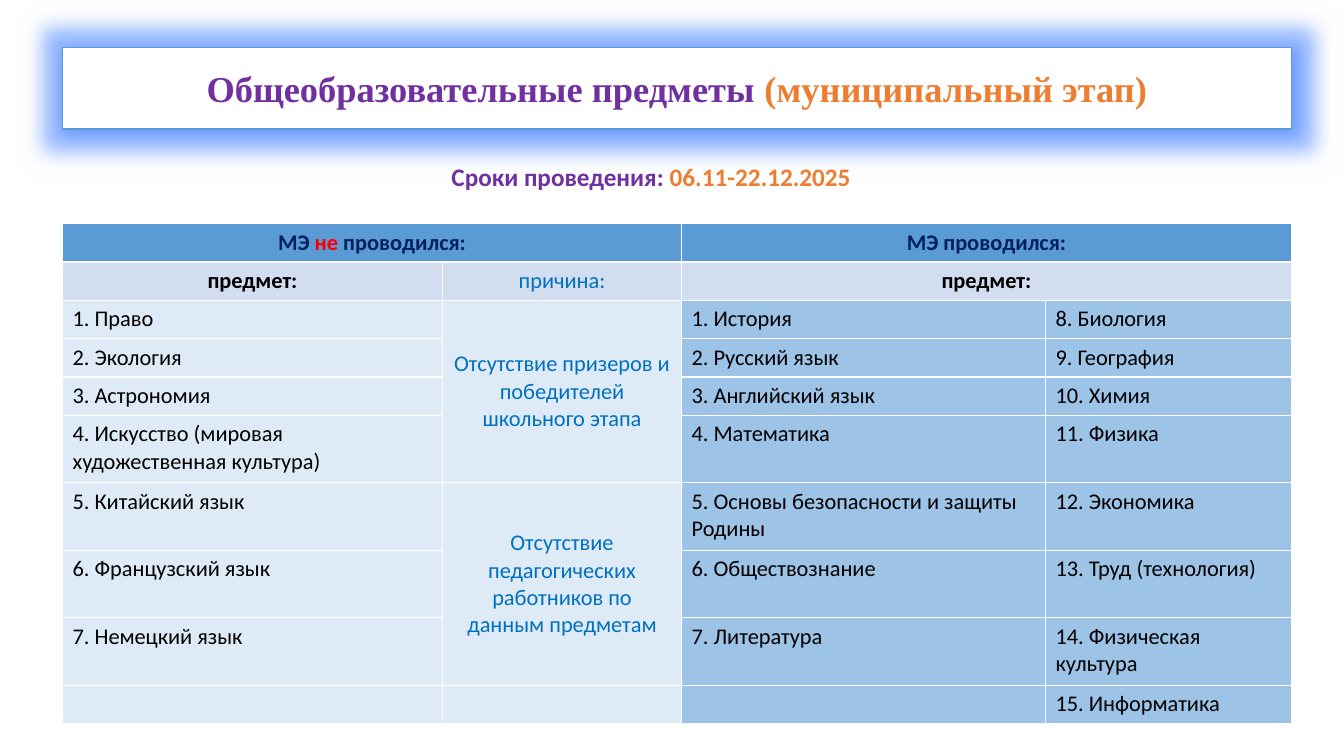
"""Builds the slide listing school subjects with and without a municipal stage."""
from dataclasses import dataclass

import pptx
import pptx.dml.color
import pptx.enum.text
import pptx.oxml
import pptx.oxml.ns
import pptx.util
from lxml import etree

Inches = pptx.util.Inches
Pt = pptx.util.Pt
CENTER = pptx.enum.text.PP_ALIGN.CENTER
LEFT = pptx.enum.text.PP_ALIGN.LEFT
MIDDLE = pptx.enum.text.MSO_ANCHOR.MIDDLE
TOP = pptx.enum.text.MSO_ANCHOR.TOP

BLACK, BLUE, NAVY, RED = "000000", "0070C0", "002060", "FF0000"
PURPLE, ORANGE, WHITE, ACCENT = "7030A0", "ED7D31", "FFFFFF", "5B9BD5"
BAND, PALE, SKY = "D2DEEF", "DEEBF7", "9DC3E6"

COLUMNS = [3.77, 2.37, 3.61, 2.44]
ROWS = [0.38] * 5 + [0.67] * 4 + [0.38]
NOT_HELD = [
    "1. Право", "2. Экология", "3. Астрономия",
    "4. Искусство (мировая художественная культура)",
    "5. Китайский язык", "6. Французский язык", "7. Немецкий язык", "",
]
HELD = [
    "1. История", "2. Русский язык", "3. Английский язык", "4. Математика",
    "5. Основы безопасности и защиты Родины", "6. Обществознание",
    "7. Литература", "",
]
HELD_MORE = [
    "8. Биология", "9. География", "10. Химия", "11. Физика", "12. Экономика",
    "13. Труд (технология)", "14. Физическая культура", "15. Информатика",
]
GLOW = (
    '<a:effectLst xmlns:a="http://schemas.openxmlformats.org/drawingml/2006/main">'
    '<a:glow rad="342900"><a:srgbClr val="6699FF"><a:alpha val="60000"/></a:srgbClr></a:glow>'
    '<a:outerShdw blurRad="127000" dist="25400" dir="2700000" algn="ctr">'
    '<a:srgbClr val="6699FF"/></a:outerShdw></a:effectLst>'
)


@dataclass
class Run:
    text: str
    color: str = BLACK
    bold: bool = False


@dataclass
class Cell:
    row: int
    col: int
    runs: list[Run]
    fill: str
    row_span: int = 1
    col_span: int = 1
    align: int = CENTER
    anchor: int = TOP


def rgb(value: str) -> pptx.dml.color.RGBColor:
    return pptx.dml.color.RGBColor.from_string(value)


def set_fill(item, color: str) -> None:
    item.fill.solid()
    item.fill.fore_color.rgb = rgb(color)


def write(tf, runs: list[Run], size: int, align: int, font: str = "Calibri") -> None:
    p = tf.paragraphs[0]
    p.alignment = align
    for run in runs:
        r = p.add_run()
        r.text = run.text
        style = {"name": font, "size": Pt(size), "bold": run.bold}
        for key, value in style.items():
            setattr(r.font, key, value)
        r.font.color.rgb = rgb(run.color)
    if not runs:
        end = etree.SubElement(p._p, pptx.oxml.ns.qn("a:endParaRPr"))
        end.set("sz", str(size * 100))


def place(s, left: float, top: float, width: float, height: float) -> None:
    box = {"left": left, "top": top, "width": width, "height": height}
    for key, value in box.items():
        setattr(s, key, Inches(value))


def add_title(slide) -> None:
    s = slide.shapes.title
    place(s, 0.62, 0.47, 12.19, 0.81)
    set_fill(s, WHITE)
    s.line.color.rgb = rgb(ACCENT)
    s.line.width = Pt(1)
    s._element.spPr.append(pptx.oxml.parse_xml(GLOW))
    tf = s.text_frame
    frame = {"word_wrap": True, "vertical_anchor": MIDDLE,
             "auto_size": pptx.enum.text.MSO_AUTO_SIZE.NONE}
    for key, value in frame.items():
        setattr(tf, key, value)
    runs = [Run("Общеобразовательные предметы ", PURPLE, True),
            Run("(муниципальный этап)", ORANGE, True)]
    write(tf, runs, 26, CENTER, "Times New Roman")


def add_dates(slide) -> None:
    s = slide.shapes.add_textbox(Inches(4.38), Inches(1.55), Inches(4.67), Inches(0.4))
    s.text_frame.word_wrap = True
    runs = [Run("Сроки проведения: ", PURPLE, True), Run("06.11-22.12.2025", ORANGE, True)]
    write(s.text_frame, runs, 18, LEFT)


def table_cells() -> list[Cell]:
    held_not = [Run("МЭ ", NAVY, True), Run("не", RED, True), Run(" проводился:", NAVY, True)]
    subject = [Run("предмет:", bold=True)]
    no_winners = [Run("Отсутствие призеров и победителей школьного этапа", BLUE)]
    no_teachers = [Run("Отсутствие педагогических работников по данным предметам", BLUE)]
    cells = [
        Cell(0, 0, held_not, ACCENT, col_span=2),
        Cell(0, 2, [Run("МЭ проводился:", NAVY, True)], ACCENT, col_span=2),
        Cell(1, 0, subject, BAND),
        Cell(1, 1, [Run("причина:", BLUE)], BAND),
        Cell(1, 2, subject, BAND, col_span=2),
        Cell(2, 1, no_winners, PALE, row_span=4, anchor=MIDDLE),
        Cell(6, 1, no_teachers, PALE, row_span=3, anchor=MIDDLE),
        Cell(9, 1, [], PALE),
    ]
    for col, names, fill in [(0, NOT_HELD, PALE), (2, HELD, SKY), (3, HELD_MORE, SKY)]:
        for row, name in enumerate(names, start=2):
            cells.append(Cell(row, col, [Run(name)] if name else [], fill, align=LEFT))
    return cells


def add_subjects(slide) -> None:
    s = slide.shapes.add_table(len(ROWS), len(COLUMNS), Inches(0.62), Inches(2.22),
                               Inches(sum(COLUMNS)), Inches(sum(ROWS)))
    table = s.table
    for column, width in zip(table.columns, COLUMNS):
        column.width = Inches(width)
    for row, height in zip(table.rows, ROWS):
        row.height = Inches(height)
    for item in table_cells():
        cell = table.cell(item.row, item.col)
        if item.row_span > 1 or item.col_span > 1:
            cell.merge(table.cell(item.row + item.row_span - 1, item.col + item.col_span - 1))
        set_fill(cell, item.fill)
        cell.vertical_anchor = item.anchor
        write(cell.text_frame, item.runs, 16, item.align)


def main() -> None:
    prs = pptx.Presentation()
    prs.slide_width, prs.slide_height = Inches(13.33), Inches(7.5)
    slide = prs.slides.add_slide(prs.slide_layouts[5])
    add_title(slide)
    add_dates(slide)
    add_subjects(slide)
    prs.save("out.pptx")


if __name__ == "__main__":
    main()
